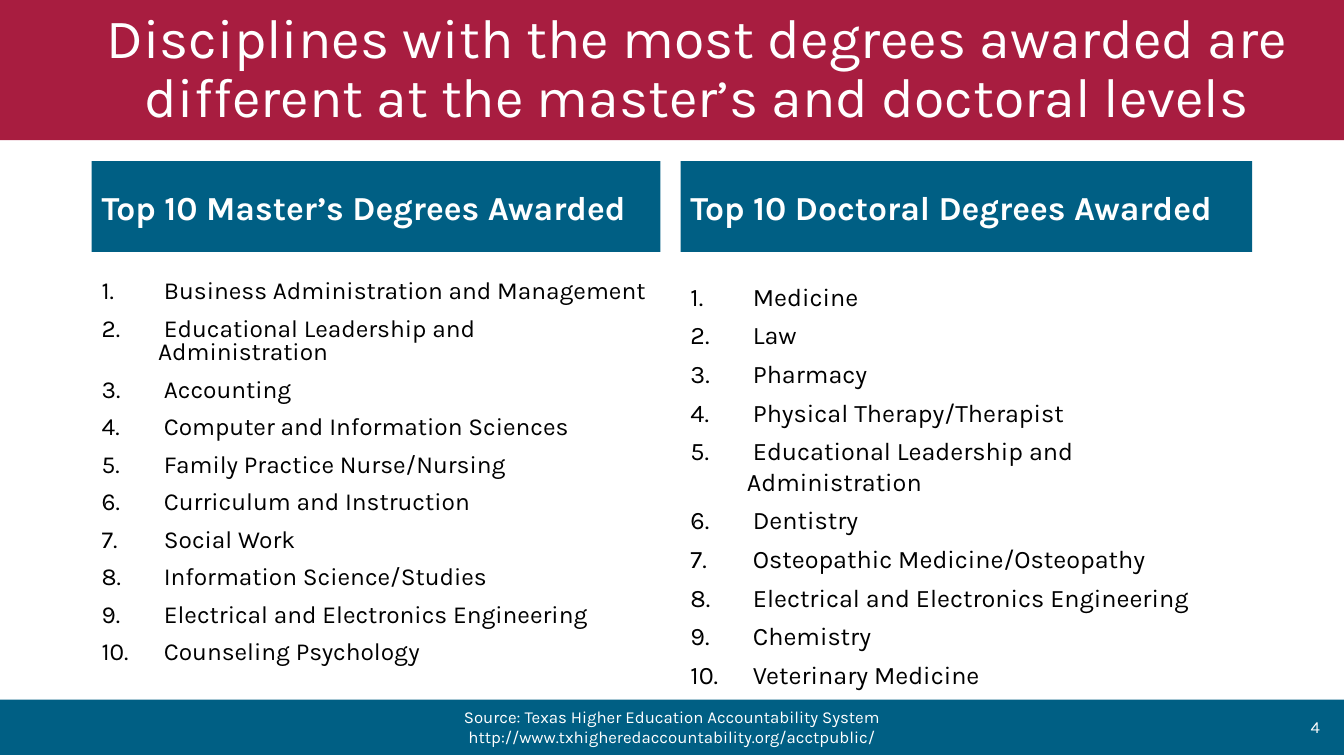
from lxml import etree
from pptx import Presentation
from pptx.dml.color import RGBColor
from pptx.enum.shapes import MSO_SHAPE
from pptx.enum.text import MSO_ANCHOR, PP_ALIGN
from pptx.oxml.ns import qn
from pptx.util import Inches, Pt

RECT = MSO_SHAPE.RECTANGLE
TOP, MID = MSO_ANCHOR.TOP, MSO_ANCHOR.MIDDLE
LEFT, MID_X, RIGHT = PP_ALIGN.LEFT, PP_ALIGN.CENTER, PP_ALIGN.RIGHT
BLUE, RED, WHITE, BLACK = "005F84", "A81D40", "FFFFFF", "000000"


def color(code):
    return RGBColor.from_string(code)


def add_box(area, lines, size=12, ink=WHITE, fill=None, anchor=MID, bold=False, **form):
    area = [Inches(n) for n in area]
    if fill:
        box = slide.shapes.add_shape(RECT, *area)
        box.shadow.inherit = False
        box.fill.solid()
        box.fill.fore_color.rgb = color(fill)
        box.line.fill.background()
    else:
        box = slide.shapes.add_textbox(*area)
    frame = box.text_frame
    frame.word_wrap = True
    frame.vertical_anchor = anchor
    for i, line in enumerate(lines):
        para = frame.paragraphs[0] if i == 0 else frame.add_paragraph()
        for key, value in form.items():
            if i or key != "space_before":
                setattr(para, key, value)
        run = para.add_run()
        run.text = line
        font = run.font
        looks = {"name": "Karla", "size": Pt(size), "bold": bold}
        for key, value in looks.items():
            setattr(font, key, value)
        font.color.rgb = color(ink)
    return frame


deck = Presentation()
deck.slide_width, deck.slide_height = Inches(13.33), Inches(7.5)
slide = deck.slides.add_slide(deck.slide_layouts[6])

add_box((0, 6.94, 13.33, 0.55), [], fill=BLUE)

columns = [
    (0.91, 5.64, "Top 10 Master’s Degrees Awarded", 17.5,
     {"line_spacing": 0.8, "space_before": Pt(10)},
     ["Business Administration and Management",
      "Educational Leadership and Administration",
      "Accounting",
      "Computer and Information Sciences",
      "Family Practice Nurse/Nursing",
      "Curriculum and Instruction",
      "Social Work",
      "Information Science/Studies",
      "Electrical and Electronics Engineering",
      "Counseling Psychology"]),
    (6.75, 5.67, "Top 10 Doctoral Degrees Awarded", 18,
     {"space_after": Pt(6)},
     ["Medicine",
      "Law",
      "Pharmacy",
      "Physical Therapy/Therapist",
      "Educational Leadership and Administration",
      "Dentistry",
      "Osteopathic Medicine/Osteopathy",
      "Electrical and Electronics Engineering",
      "Chemistry",
      "Veterinary Medicine"]),
]
for left, width, head, size, form, items in columns:
    add_box((left, 1.6, width, 0.9), [head], 24, fill=BLUE, bold=True, alignment=LEFT)
    names = [" " + item for item in items]
    body = add_box((left, 2.74, width, 4.03), names, size, BLACK, anchor=TOP, **form)
    for para in body.paragraphs:
        props = para._p.get_or_add_pPr()
        props.set("marL", str(Inches(0.56)))
        props.set("indent", str(-Inches(0.56)))
        etree.SubElement(props, qn("a:buAutoNum"), type="arabicPeriod")

source = ["Source: Texas Higher Education Accountability System",
          "http://www.txhigheredaccountability.org/acctpublic/"]
add_box((3.14, 7.01, 7.05, 0.4), source, alignment=MID_X)

title = "Disciplines with the most degrees awarded are different at the master’s and doctoral levels"
banner = add_box((0, 0, 13.33, 1.39), [title], 39.6, fill=RED, alignment=MID_X, line_spacing=0.9)
banner.margin_left = Inches(0.6)

add_box((10.19, 7.01, 3, 0.4), ["4"], alignment=RIGHT)

deck.save("out.pptx")
